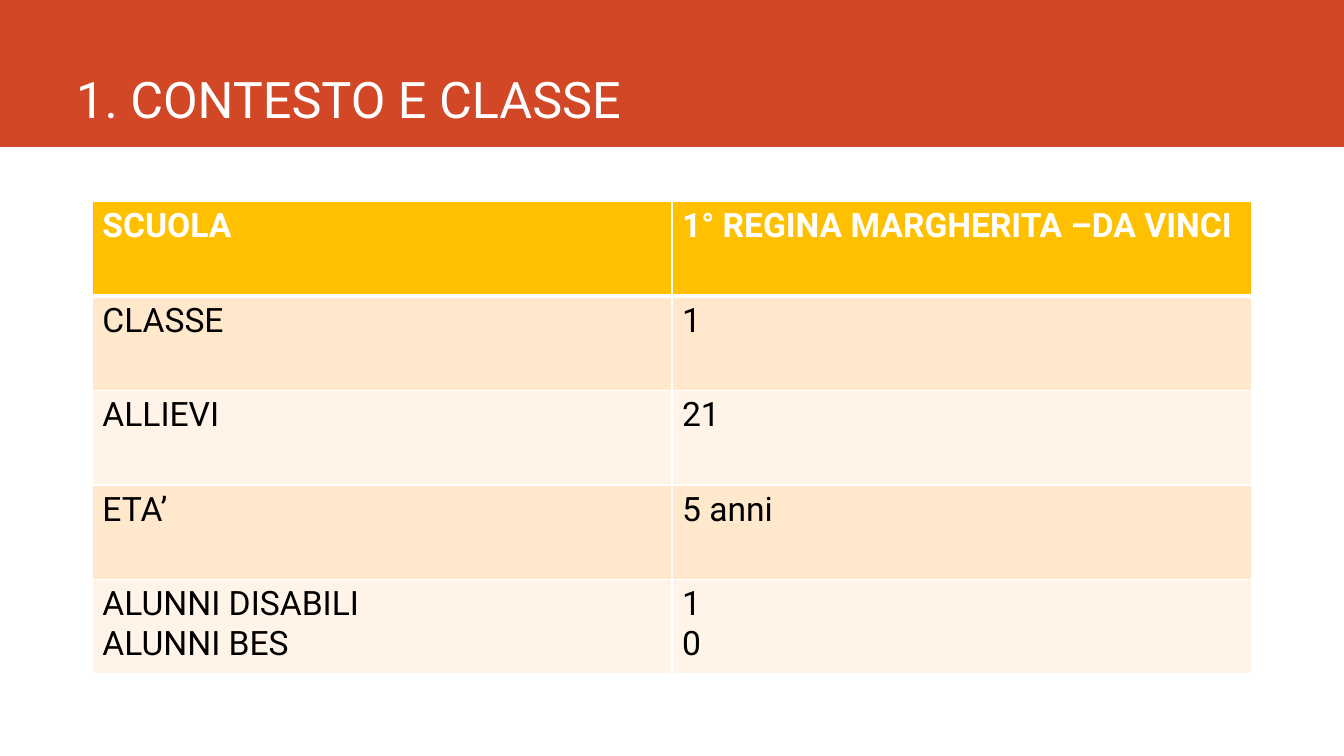
from typing import NamedTuple

from lxml import etree
from pptx import Presentation
from pptx.dml.color import RGBColor
from pptx.enum.shapes import MSO_SHAPE
from pptx.enum.text import MSO_ANCHOR, MSO_AUTO_SIZE, PP_ALIGN
from pptx.oxml.ns import qn
from pptx.util import Emu, Pt

RECTANGLE = MSO_SHAPE.RECTANGLE
BOTTOM = MSO_ANCHOR.BOTTOM
LEFT = PP_ALIGN.LEFT
NO_AUTOFIT = MSO_AUTO_SIZE.NONE

EMU_PER_PX = 9525
PAGE_WIDTH, PAGE_HEIGHT = 1280, 720
BAND_HEIGHT = 140
COLUMN_WIDTH, ROW_HEIGHT = 552, 90
TITLE_ONLY_LAYOUT = 5
FONT = "Roboto"
COLORS = {
    "band": "D24726",
    "header": "FFC000",
    "dark_row": "FFE8CC",
    "light_row": "FFF4E7",
    "white": "FFFFFF",
    "black": "000000",
}


class ClassFact(NamedTuple):
    label: str
    value: str


FACTS = [
    ClassFact("SCUOLA", "1° REGINA MARGHERITA –DA VINCI"),
    ClassFact("CLASSE", "1"),
    ClassFact("ALLIEVI", "21"),
    ClassFact("ETA’", "5 anni"),
    ClassFact("ALUNNI DISABILI\nALUNNI BES", "1\n0"),
]


def px(length: int) -> Emu:
    return Emu(length * EMU_PER_PX)


def color(name: str) -> RGBColor:
    return RGBColor.from_string(COLORS[name])


def format_text(text_frame, size: int, color_name: str, bold: bool) -> None:
    for paragraph in text_frame.paragraphs:
        paragraph.alignment = LEFT
        for run in paragraph.runs:
            run.font.name = FONT
            run.font.size = Pt(size)
            run.font.bold = bold
            run.font.color.rgb = color(color_name)


def add_borders(cell, top: int, bottom: int) -> None:
    """Add white borders, with the top and bottom widths in points."""
    properties = cell._tc.get_or_add_tcPr()
    for side, width in (("L", 1), ("R", 1), ("T", top), ("B", bottom)):
        line = etree.SubElement(properties, qn(f"a:ln{side}"), w=str(Pt(width)))
        fill = etree.SubElement(line, qn("a:solidFill"))
        etree.SubElement(fill, qn("a:srgbClr"), val=COLORS["white"])


def add_title(page) -> None:
    title = page.shapes.title
    title.left, title.top = px(63), px(0)
    title.width, title.height = px(1129), px(127)
    frame = title.text_frame
    frame.text = "1. CONTESTO E CLASSE"
    frame.auto_size = NO_AUTOFIT
    frame.vertical_anchor = BOTTOM
    format_text(frame, 36, "white", False)

    band = page.shapes.add_shape(RECTANGLE, 0, 0, px(PAGE_WIDTH), px(BAND_HEIGHT))
    band.shadow.inherit = False
    band.fill.solid()
    band.fill.fore_color.rgb = color("band")
    band.line.fill.background()
    title.element.addprevious(band.element)


def add_fact_table(page) -> None:
    columns = len(ClassFact._fields)
    table = page.shapes.add_table(
        len(FACTS), columns, px(88), px(192),
        px(columns * COLUMN_WIDTH), px(len(FACTS) * ROW_HEIGHT),
    ).table
    for row_index, fact in enumerate(FACTS):
        is_header = row_index == 0
        if is_header:
            fill_name = "header"
        else:
            fill_name = "dark_row" if row_index % 2 else "light_row"
        for column_index, text in enumerate(fact):
            cell = table.cell(row_index, column_index)
            cell.text_frame.text = text
            format_text(cell.text_frame, 24, "white" if is_header else "black", is_header)
            add_borders(cell, 3 if row_index == 1 else 1, 3 if is_header else 1)
            cell.fill.solid()
            cell.fill.fore_color.rgb = color(fill_name)


def main() -> None:
    deck = Presentation()
    deck.slide_width, deck.slide_height = px(PAGE_WIDTH), px(PAGE_HEIGHT)
    page = deck.slides.add_slide(deck.slide_layouts[TITLE_ONLY_LAYOUT])
    add_title(page)
    add_fact_table(page)
    deck.save("out.pptx")


if __name__ == "__main__":
    main()
